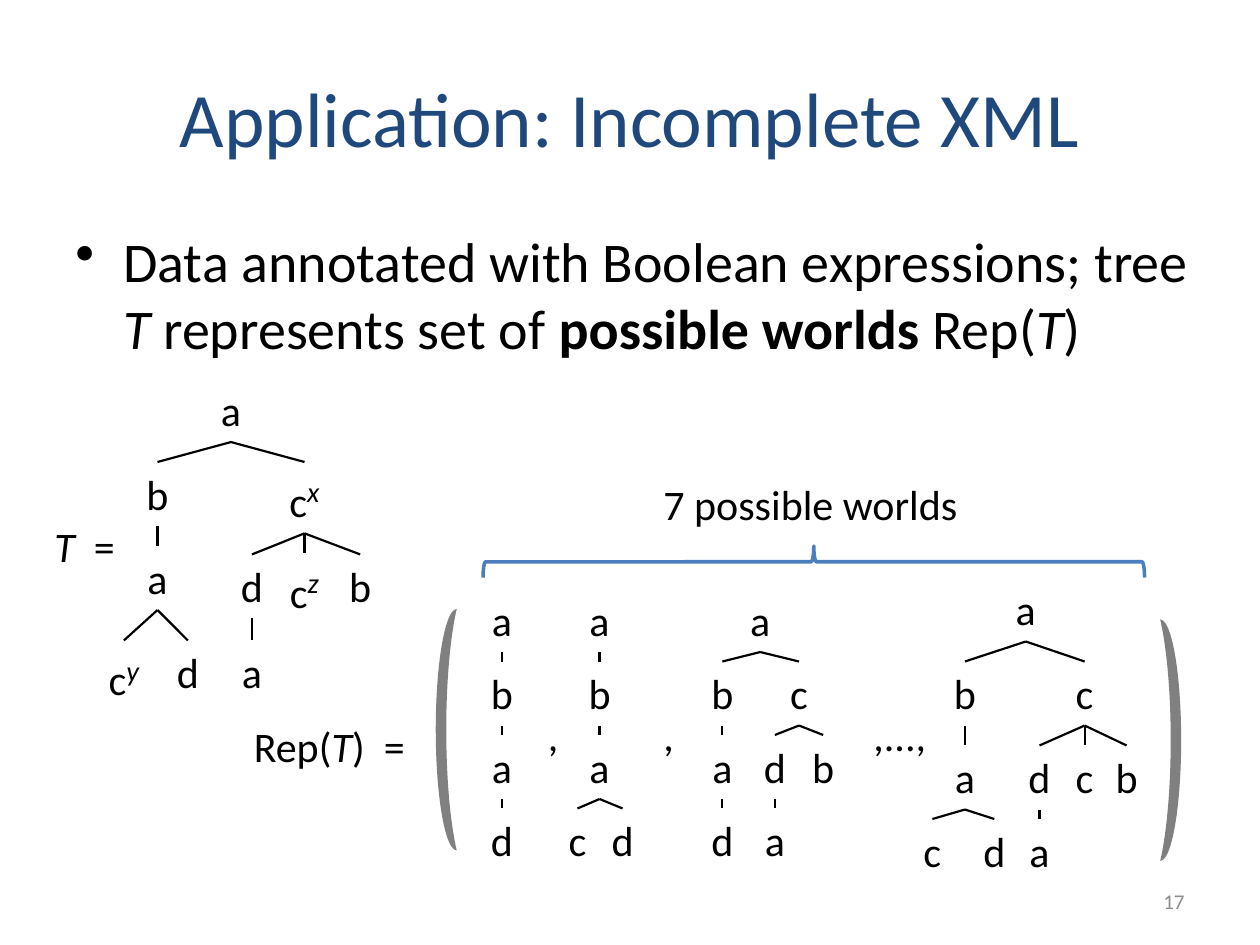
from dataclasses import dataclass
from lxml.etree import SubElement
from pptx import Presentation
from pptx.dml.color import RGBColor
from pptx.enum.shapes import MSO_CONNECTOR, MSO_SHAPE
from pptx.enum.text import MSO_ANCHOR, PP_ALIGN
from pptx.oxml.ns import qn
from pptx.util import Inches, Pt

CELL = Inches(1) / 12
BLACK, NAVY, BLUE, GRAY, PALE = "000000", "1F497D", "4B7EBC", "808080", "8C8C8C"
LETTER_WIDTH = {"a": 4.3, "b": 4.5, "c": 4.1, "d": 4.5}
WORLD_ROWS = (56, 63, 70, 77)
LAST_ROWS = (55, 63, 71, 78)


@dataclass
class Node:
    """A tree label centred on a column, with its top on a row."""
    label: str
    column: float
    row: float
    children: tuple = ()
    condition: str = ""


def cells(*values):
    """Convert grid cells of a twelfth of an inch to lengths."""
    return [round(value * CELL) for value in values]


def color(code):
    """Turn a hex string into a colour."""
    return RGBColor.from_string(code)


def chain(labels, column, rows, children=()):
    """Build a vertical path of nodes ending in the given children."""
    for label, row in reversed(list(zip(labels, rows))):
        children = (Node(label, column, row, children),)
    return children[0]


def add_text(page, area, spans, size=24, code=BLACK, align=PP_ALIGN.LEFT,
             anchor=MSO_ANCHOR.TOP, wrap=True):
    """Add one paragraph of (text, style) spans and return its box."""
    box = page.shapes.add_textbox(*cells(*area))
    box.text_frame.word_wrap = wrap
    box.text_frame.vertical_anchor = anchor
    para = box.text_frame.paragraphs[0]
    para.alignment = align
    para.font.name, para.font.size = "Calibri", Pt(size)
    para.font.color.rgb = color(code)
    for text, style in spans:
        span = para.add_run()
        span.text = text
        if style == "bold":
            span.font.bold = True
        if style in ("italic", "super"):
            span.font.italic = True
        if style == "super":
            span.font.size = Pt(28)
            span.font._element.set("baseline", "30000")
    return box


def add_bullet(box):
    """Give the first paragraph of a box a hanging bullet."""
    para = box.text_frame.paragraphs[0]
    para.space_before = Pt(6.4)
    properties = para._p.get_or_add_pPr()
    properties.set("marL", str(Inches(0.38)))
    properties.set("indent", str(-Inches(0.38)))
    bullet = properties.makeelement(qn("a:buChar"), {"char": "•"})
    properties.find(qn("a:spcBef")).addnext(bullet)


def add_branch(page, parent, child):
    """Join the bottom of a parent box to the top of a child box."""
    branch = page.shapes.add_connector(MSO_CONNECTOR.STRAIGHT, 0, 0, 0, 0)
    branch.begin_connect(parent, 2)
    branch.end_connect(child, 0)
    branch.line.color.rgb = color(BLACK)
    branch.line.width = Pt(1.25)
    SubElement(branch._element.spPr, qn("a:effectLst"))


def add_tree(page, node):
    """Draw a node and its descendants, and return the node's box."""
    spans = [(node.label, "")]
    width, height = LETTER_WIDTH[node.label], 6.1
    if node.condition:
        spans.append((node.condition, "super"))
        width, height = 5.5, 6.8
    area = (node.column - width / 2, node.row, width, height)
    box = add_text(page, area, spans, align=PP_ALIGN.CENTER, wrap=False)
    for child in node.children:
        add_branch(page, box, add_tree(page, child))
    return box


def add_parenthesis(page, column, row, flipped=False):
    """Draw a tall crescent as an opening or closing parenthesis."""
    moon = page.shapes.add_shape(MSO_SHAPE.MOON, *cells(column, row, 2, 23))
    moon.shadow.inherit = False
    moon.fill.solid()
    moon.fill.fore_color.rgb = color(GRAY)
    moon.line.fill.background()
    if flipped:
        moon._element.spPr.xfrm.set("flipH", "1")


def add_brace(page, area):
    """Draw a brace turned to open downwards."""
    brace = page.shapes.add_shape(MSO_SHAPE.LEFT_BRACE, *cells(*area))
    brace.rotation = 90
    brace.shadow.inherit = False
    brace.fill.background()
    brace.line.color.rgb = color(BLUE)
    brace.line.width = Pt(2)


def annotated_tree():
    """Return the tree T with its Boolean conditions."""
    left = chain("ba", 15, (44, 52), (
        Node("c", 11.8, 61, condition="y"), Node("d", 17.9, 61)))
    right = Node("c", 29, 44, (
        chain("da", 24, (52.8, 61)),
        Node("c", 29, 52.7, condition="z"),
        Node("b", 34.3, 52.8)), "x")
    return Node("a", 22, 36, (left, right))


def possible_worlds():
    """Return the four worlds that are shown in full."""
    top, second, third, bottom = WORLD_ROWS
    first_last, *lower_last = LAST_ROWS
    middle_last, third_last, bottom_last = lower_last
    return (
        chain("abad", 47.8, WORLD_ROWS),
        chain("aba", 57.1, WORLD_ROWS,
              (Node("c", 55, bottom), Node("d", 59.3, bottom))),
        Node("a", 72.4, top, (
            chain("bad", 68.8, WORLD_ROWS[1:]),
            Node("c", 76.1, second, (
                chain("da", 73.8, (third, bottom)),
                Node("b", 78.4, third))))),
        Node("a", 97.7, first_last, (
            chain("ba", 91.9, lower_last,
                  (Node("c", 88.8, bottom_last), Node("d", 94.7, bottom_last))),
            Node("c", 103.3, middle_last, (
                chain("da", 99, lower_last[1:]),
                Node("c", 103.3, third_last),
                Node("b", 107.3, third_last))))),
    )


def main():
    """Build the slide and save it."""
    deck = Presentation()
    deck.slide_width, deck.slide_height = Inches(10), Inches(7.5)
    page = deck.slides.add_slide(deck.slide_layouts[6])
    add_text(page, (6, 3.6, 108, 15), [("Application: Incomplete XML", "")],
             44, NAVY, PP_ALIGN.CENTER, MSO_ANCHOR.MIDDLE)
    add_bullet(add_text(page, (6, 21, 109, 59.4), [
        ("Data annotated with Boolean expressions; tree ", ""), ("T", "italic"),
        (" represents set of ", ""), ("possible worlds ", "bold"),
        ("Rep(", ""), ("T", "italic"), (")", "")], 32))
    add_text(page, (86, 83.4, 28, 4.8), [("17", "")], 12, PALE,
             PP_ALIGN.RIGHT, MSO_ANCHOR.MIDDLE)
    add_text(page, (4, 49, 13, 6), [("T ", "italic"), (" =", "")])
    add_text(page, (23, 68, 19, 6),
             [("Rep(", ""), ("T", "italic"), (")  =", "")])
    for tree in (annotated_tree(), *possible_worlds()):
        add_tree(page, tree)
    add_parenthesis(page, 41.5, 58)
    add_parenthesis(page, 110.5, 59, flipped=True)
    for text, column, width in ((",", 51, 3.6), (",", 62, 3.6), (",...,", 82, 9.6)):
        add_text(page, (column, 67, width, 6), [(text, "")])
    add_text(page, (62, 45, 43, 6), [("7 possible worlds", "")])
    add_brace(page, (76, 22, 3, 63))
    deck.save("out.pptx")


if __name__ == "__main__":
    main()
